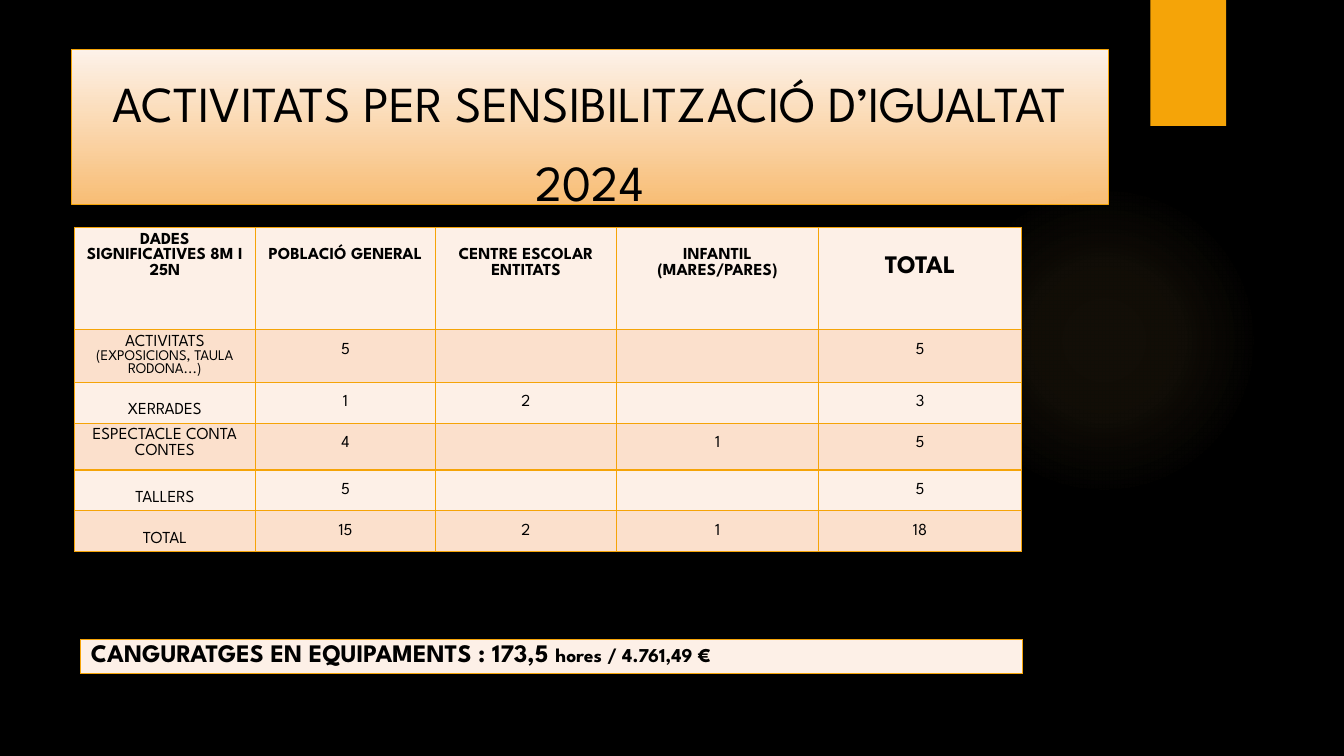
from lxml import etree
from pptx import Presentation
from pptx.dml.color import RGBColor
from pptx.enum.shapes import MSO_SHAPE as Shape
from pptx.enum.text import MSO_ANCHOR as Anchor, PP_ALIGN as Align
from pptx.oxml import parse_xml
from pptx.oxml.ns import nsdecls, qn
from pptx.util import Pt

FONT = "League Spartan"
COLORS = {
    "black": "000000",
    "orange": "F5A408",
    "glow": "FAC96A",
    "title_top": "FDF2E9",
    "title_bottom": "F8BD75",
    "light": "FDF0E7",
    "peach": "FBE0CC",
}
MARGIN = 3.6      # normal top and bottom margin of a cell
LOWERED = 14.6    # top margin of a cell whose text starts one line down
COLUMNS = [129, 129, 129, 144.7, 144.7]

# Each header: paragraphs, text size, top margin
HEADERS = [
    (["DADES SIGNIFICATIVES 8M I 25N"], 12, MARGIN),
    (["POBLACIÓ GENERAL"], 12, LOWERED),
    (["CENTRE ESCOLAR", "ENTITATS"], 12, LOWERED),
    (["INFANTIL (MARES/PARES)"], 12, LOWERED),
    (["TOTAL"], 18, 20.2),
]
HEADER_HEIGHT = 73

# Each row: height, label paragraphs with sizes, label top margin, values
ROWS = [
    (37.5, [("ACTIVITATS", 12), ("(EXPOSICIONS, TAULA RODONA...)", 10.5)],
     MARGIN, ["5", "", "", "5"]),
    (29.3, [("XERRADES", 12)], LOWERED, ["1", "2", "", "3"]),
    (33.4, [("ESPECTACLE CONTA CONTES", 12)], MARGIN, ["4", "", "1", "5"]),
    (29.3, [("TALLERS", 12)], LOWERED, ["5", "", "", "5"]),
    (29.3, [("TOTAL", 12)], LOWERED, ["15", "2", "1", "18"]),
]


def rgb(name):
    return RGBColor.from_string(COLORS[name])


def add_span(para, text, size, bold=False):
    span = para.add_run()
    span.text = text
    font = span.font
    font.name, font.size, font.bold = FONT, Pt(size), bold
    font.color.rgb = rgb("black")


def add_plain_shape(page, kind, left, top, width, height, fill):
    shape = page.shapes.add_shape(kind, Pt(left), Pt(top), Pt(width), Pt(height))
    shape.shadow.inherit = False
    shape.fill.solid()
    shape.fill.fore_color.rgb = rgb(fill)
    shape.line.fill.background()
    return shape


def add_glow(page):
    glow = add_plain_shape(page, Shape.OVAL, 677.5, 131.8, 221.8, 221.8, "glow")
    stops = "".join(
        f'<a:gs pos="{pos * 1000}"><a:srgbClr val="{COLORS["glow"]}">'
        f'<a:alpha val="{alpha * 1000}"/></a:srgbClr></a:gs>'
        for pos, alpha in [(0, 7), (36, 6), (69, 0)])
    gradient = parse_xml(
        f'<a:gradFill {nsdecls("a")} rotWithShape="1"><a:gsLst>{stops}</a:gsLst>'
        '<a:path path="circle"><a:fillToRect l="50000" t="50000" r="50000" b="50000"/>'
        '</a:path></a:gradFill>')
    properties = glow.element.spPr
    properties.replace(properties.find(qn("a:solidFill")), gradient)


def add_title(page, text):
    title = page.shapes.title
    title.left, title.top, title.width, title.height = Pt(51), Pt(35.3), Pt(740.5), Pt(110.5)
    title.fill.gradient()
    title.fill.gradient_angle = 270
    for stop, name in zip(title.fill.gradient_stops, ["title_top", "title_bottom"]):
        stop.color.rgb = rgb(name)
    title.line.color.rgb = rgb("orange")
    title.line.width = Pt(0.75)
    frame = title.text_frame
    frame.word_wrap = True
    frame.vertical_anchor = Anchor.TOP
    para = frame.paragraphs[0]
    para.alignment = Align.CENTER
    para.line_spacing = 1.3
    para.space_before = Pt(0)
    add_span(para, text, 36)


def add_borders(cell):
    properties = cell._tc.get_or_add_tcPr()
    for side in ["lnL", "lnR", "lnT", "lnB"]:
        line = etree.SubElement(properties, qn(f"a:{side}"), w=str(Pt(1)))
        fill = etree.SubElement(line, qn("a:solidFill"))
        etree.SubElement(fill, qn("a:srgbClr"), val=COLORS["orange"])


def fill_cell(cell, fill, paragraphs, top=MARGIN, align=Align.CENTER, spacing=None):
    """Each paragraph is a list of (text, size, bold) spans."""
    add_borders(cell)
    cell.fill.solid()
    cell.fill.fore_color.rgb = rgb(fill)
    cell.margin_left = cell.margin_right = Pt(7.2)
    cell.margin_top = Pt(top)
    cell.margin_bottom = Pt(MARGIN if paragraphs else 0)
    cell.vertical_anchor = Anchor.TOP
    frame = cell.text_frame
    for index, spans in enumerate(paragraphs):
        para = frame.add_paragraph() if index else frame.paragraphs[0]
        para.alignment = align
        if spacing:
            para.line_spacing = spacing
        for span in spans:
            add_span(para, *span)


def add_grid(page, left, top, widths, heights):
    table = page.shapes.add_table(
        len(heights), len(widths), Pt(left), Pt(top),
        Pt(sum(widths)), Pt(sum(heights))).table
    table.first_row = table.horz_banding = False
    for column, width in zip(table.columns, widths):
        column.width = Pt(width)
    for row, height in zip(table.rows, heights):
        row.height = Pt(height)
    return table


def add_activities(page):
    heights = [HEADER_HEIGHT] + [row[0] for row in ROWS]
    table = add_grid(page, 53.3, 162.5, COLUMNS, heights)
    for column, (lines, size, top) in enumerate(HEADERS):
        fill_cell(table.cell(0, column), "light",
                  [[(line, size, True)] for line in lines], top)
    for index, (_, label, top, values) in enumerate(ROWS, start=1):
        fill = "peach" if index % 2 else "light"
        fill_cell(table.cell(index, 0), fill, [[line] for line in label], top)
        for column, value in enumerate(values, start=1):
            paragraphs = [[(value, 12)]] if value else []
            fill_cell(table.cell(index, column), fill, paragraphs,
                      MARGIN if value else 0, spacing=1.5)


def add_childcare(page):
    table = add_grid(page, 57.7, 457, [672.6], [24])
    spans = [("CANGURATGES EN EQUIPAMENTS : 173,5 ", 18, True),
             ("hores / 4.761,49 €", 14, True)]
    fill_cell(table.cell(0, 0), "light", [spans], align=Align.LEFT)


def main():
    deck = Presentation()
    deck.slide_width, deck.slide_height = Pt(960), Pt(540)
    page = deck.slides.add_slide(deck.slide_layouts[5])
    page.background.fill.solid()
    page.background.fill.fore_color.rgb = rgb("black")

    # Decoration
    add_glow(page)
    add_plain_shape(page, Shape.RECTANGLE, 821.8, 0, 54, 90, "orange")

    # Content
    add_title(page, "ACTIVITATS PER SENSIBILITZACIÓ D’IGUALTAT 2024")
    add_activities(page)
    add_childcare(page)
    deck.save("out.pptx")


if __name__ == "__main__":
    main()
